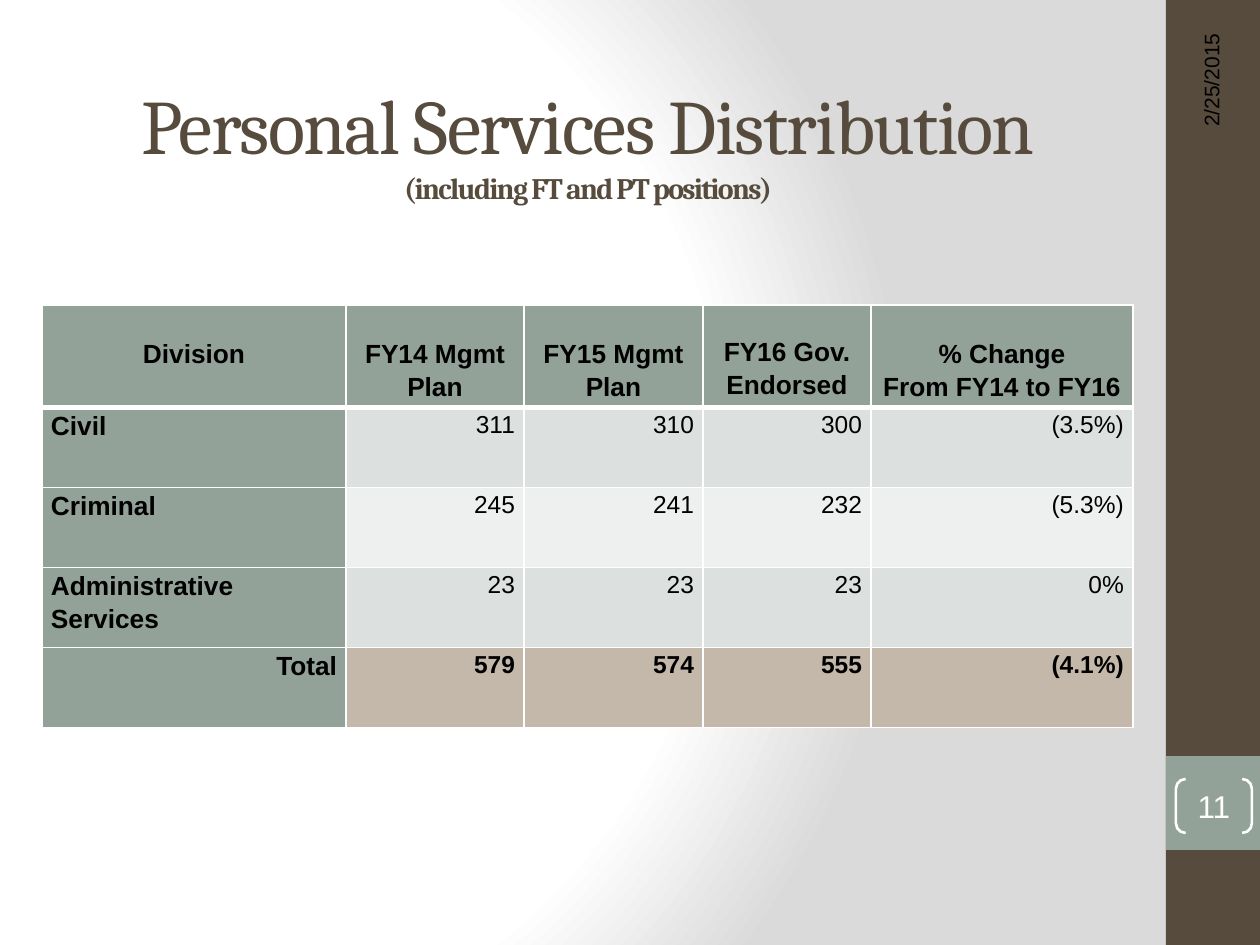
import pptx
import pptx.util
import pptx.dml.color
import pptx.enum.shapes
import pptx.enum.text
import pptx.oxml
import pptx.oxml.ns

# Content
HEADING = "Personal Services Distribution"
SUBHEADING = "(including FT and PT positions)"
DATE = "2/25/2015"
PAGE = "11"
HEADERS = ["Division", "FY14 Mgmt Plan", "FY15 Mgmt Plan", "FY16 Gov. Endorsed",
           "% Change\nFrom FY14 to FY16"]
DIVISIONS = [
    ("Civil", "311", "310", "300", "(3.5%)"),
    ("Criminal", "245", "241", "232", "(5.3%)"),
    ("Administrative Services", "23", "23", "23", "0%"),
    ("Total", "579", "574", "555", "(4.1%)"),
]

# Style and layout, lengths in px
COLORS = {"brown": "564B3C", "sage": "93A299", "band": "DCE0DE", "pale": "EEF0EF",
          "tan": "C3B8A9", "white": "FFFFFF", "gray": "DADADA", "black": "000000"}
ROW_COLORS = ["band", "pale", "band", "tan"]
PX = 914400 // 126
COLUMN_WIDTHS = [304, 178, 179, 168, 262]
HEADER_HEIGHT, ROW_HEIGHT = 97, 80
HEADER_DROPS = [30, 30, 30, 28, 30]
SIDEBAR_LEFT, SIDEBAR_WIDTH = 1166, 94

ALIGN = pptx.enum.text.PP_ALIGN
MIDDLE = pptx.enum.text.MSO_ANCHOR.MIDDLE
SHAPES = pptx.enum.shapes.MSO_SHAPE


def px(*lengths):
    return [pptx.util.Emu(length * PX) for length in lengths]


def rgb(name):
    return pptx.dml.color.RGBColor.from_string(COLORS[name])


def add_run(paragraph, text, size, color, font="Arial", bold=False):
    run = paragraph.add_run()
    run.text = text
    run.font.size = pptx.util.Pt(size)
    run.font.name = font
    run.font.bold = bold
    run.font.color.rgb = rgb(color)
    return run


def add_block(slide, box, color):
    block = slide.shapes.add_shape(SHAPES.RECTANGLE, *px(*box))
    block.shadow.inherit = False
    block.fill.solid()
    block.fill.fore_color.rgb = rgb(color)
    block.line.fill.background()


def set_background(slide):
    slide.background.fill.gradient()
    old = slide.background._cSld.find(".//" + pptx.oxml.ns.qn("a:gradFill"))
    stops = "".join(
        f'<a:gs pos="{position * 1000}"><a:srgbClr val="{COLORS[color]}"/></a:gs>'
        for position, color in [(0, "white"), (75, "white"), (100, "gray")])
    new = pptx.oxml.parse_xml(
        f'<a:gradFill {pptx.oxml.ns.nsdecls("a")} rotWithShape="1"><a:gsLst>{stops}</a:gsLst>'
        '<a:path path="circle"><a:fillToRect l="20000" t="50000" r="100000" b="50000"/>'
        '</a:path></a:gradFill>')
    old.getparent().replace(old, new)


def set_borders(cell, top, bottom):
    widths = {"lnL": 1, "lnR": 1, "lnT": top, "lnB": bottom}
    for index, (side, points) in enumerate(widths.items()):
        cell._tc.get_or_add_tcPr().insert(index, pptx.oxml.parse_xml(
            f'<a:{side} {pptx.oxml.ns.nsdecls("a")} w="{points * 12700}"><a:solidFill>'
            f'<a:srgbClr val="{COLORS["white"]}"/></a:solidFill></a:{side}>'))


def fill_cell(cell, text, color, size, align, bold, drop=0):
    cell.fill.solid()
    cell.fill.fore_color.rgb = rgb(color)
    cell.margin_left, cell.margin_right, cell.margin_top, cell.margin_bottom = px(9, 9, drop, 0)
    for index, line in enumerate(text.split("\n")):
        frame = cell.text_frame
        paragraph = frame.add_paragraph() if index else frame.paragraphs[0]
        paragraph.alignment = align
        paragraph.line_spacing = 1.15
        add_run(paragraph, line, size, "black", bold=bold)


def add_heading(slide):
    title = slide.shapes.title
    title.left, title.top, title.width, title.height = px(21, 63, 1134, 157)
    frame = title.text_frame
    frame.auto_size = pptx.enum.text.MSO_AUTO_SIZE.NONE
    frame.vertical_anchor = MIDDLE
    paragraph = frame.paragraphs[0]
    paragraph.alignment = ALIGN.CENTER
    main = add_run(paragraph, HEADING, 44, "brown", "Cambria")
    paragraph.add_line_break()
    sub = add_run(paragraph, SUBHEADING, 17, "brown", "Cambria", True)
    for run in (main, sub):
        run.font._element.set("spc", "-100")


def add_sidebar(slide):
    add_block(slide, (SIDEBAR_LEFT, 0, SIDEBAR_WIDTH, 945), "brown")
    add_block(slide, (SIDEBAR_LEFT, 756, SIDEBAR_WIDTH, 94), "sage")

    # Date, turned upwards
    date = slide.shapes.add_textbox(*px(1043, 164, 336, 50))
    date.rotation = 270
    date.text_frame.word_wrap = True
    date.text_frame.vertical_anchor = MIDDLE
    date.text_frame.paragraphs[0].alignment = ALIGN.RIGHT
    add_run(date.text_frame.paragraphs[0], DATE, 12, "black")

    # Page number in brackets
    page = slide.shapes.add_shape(SHAPES.DOUBLE_BRACKET, *px(1176, 779, 76, 54))
    page.adjustments[0] = 0.18
    page.shadow.inherit = False
    page.fill.background()
    page.line.color.rgb = rgb("white")
    page.line.width = pptx.util.Pt(1.5)
    frame = page.text_frame
    frame.margin_left = frame.margin_right = frame.margin_top = frame.margin_bottom = 0
    frame.vertical_anchor = MIDDLE
    frame.paragraphs[0].alignment = ALIGN.CENTER
    add_run(frame.paragraphs[0], PAGE, 18, "white")


def add_positions(slide):
    height = HEADER_HEIGHT + ROW_HEIGHT * len(DIVISIONS)
    positions = slide.shapes.add_table(
        len(DIVISIONS) + 1, len(HEADERS), *px(42, 305, sum(COLUMN_WIDTHS), height)).table
    positions.first_row = positions.horz_banding = False
    for column, width in zip(positions.columns, px(*COLUMN_WIDTHS)):
        column.width = width
    for index, row in enumerate(positions.rows):
        row.height = px(ROW_HEIGHT if index else HEADER_HEIGHT)[0]

    # Header row
    for c, (text, drop) in enumerate(zip(HEADERS, HEADER_DROPS)):
        cell = positions.cell(0, c)
        fill_cell(cell, text, "sage", 15, ALIGN.CENTER, True, drop)
        set_borders(cell, 1, 3)

    # Division rows, with the total last
    for r, (division, color) in enumerate(zip(DIVISIONS, ROW_COLORS), 1):
        is_total = r == len(DIVISIONS)
        for c, text in enumerate(division):
            cell = positions.cell(r, c)
            if c == 0:
                fill_cell(cell, text, "sage", 15, ALIGN.RIGHT if is_total else ALIGN.LEFT, True)
            else:
                fill_cell(cell, text, color, 14, ALIGN.RIGHT, is_total)
            set_borders(cell, 3 if r == 1 else 1, 1)


def main():
    deck = pptx.Presentation()
    deck.slide_width, deck.slide_height = px(1260, 945)
    slide = deck.slides.add_slide(deck.slide_layouts[5])
    set_background(slide)
    add_sidebar(slide)
    add_heading(slide)
    add_positions(slide)
    deck.save("out.pptx")


if __name__ == "__main__":
    main()
